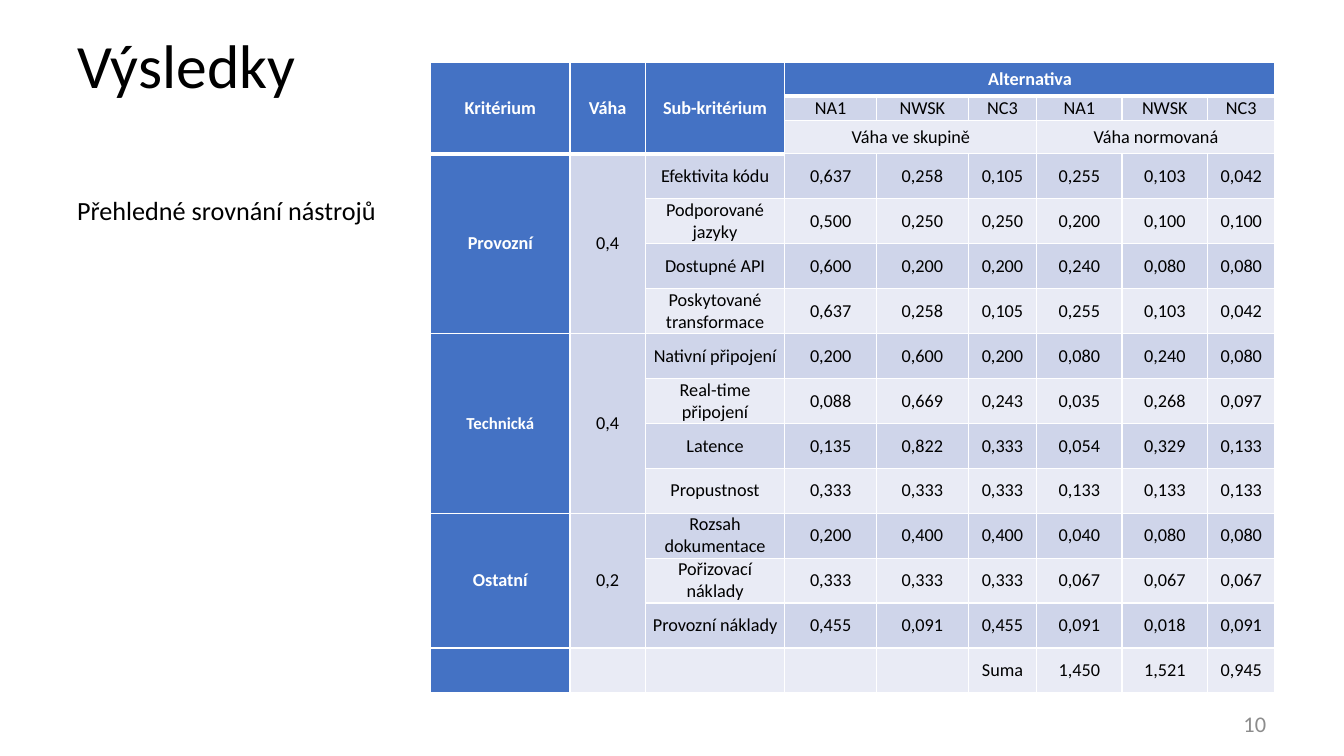
from lxml import etree
from pptx import Presentation
from pptx.dml.color import RGBColor
from pptx.enum.text import MSO_ANCHOR, PP_ALIGN
from pptx.oxml.ns import qn
from pptx.util import Pt

LEFT, CENTER, RIGHT = PP_ALIGN.LEFT, PP_ALIGN.CENTER, PP_ALIGN.RIGHT
TOP, MIDDLE = MSO_ANCHOR.TOP, MSO_ANCHOR.MIDDLE

WHITE, BLACK, GRAY = "FFFFFF", "000000", "8C8C8C"
BLUE, BAND_DARK, BAND_LIGHT = "4472C4", "CFD5EA", "E9EBF5"

COL_WIDTHS = [99.7, 53.7, 99.7, 65.5, 65.5, 49, 61, 61, 48.3]
HEADER_HEIGHTS = [23.7, 17.7, 23.7]
ROW_HEIGHT = 32.1
HEADERS = ["Kritérium", "Váha", "Sub-kritérium"]
TOOLS = ["NA1", "NWSK", "NC3"]
VALUE_COL = len(HEADERS)
CRITERIA = [
    ("Provozní", "0,4", 13, [
        ("Efektivita kódu", "0,637 0,258 0,105 0,255 0,103 0,042"),
        ("Podporované jazyky", "0,500 0,250 0,250 0,200 0,100 0,100"),
        ("Dostupné API", "0,600 0,200 0,200 0,240 0,080 0,080"),
        ("Poskytované transformace", "0,637 0,258 0,105 0,255 0,103 0,042"),
    ]),
    ("Technická", "0,4", 12, [
        ("Nativní připojení", "0,200 0,600 0,200 0,080 0,240 0,080"),
        ("Real-time připojení", "0,088 0,669 0,243 0,035 0,268 0,097"),
        ("Latence", "0,135 0,822 0,333 0,054 0,329 0,133"),
        ("Propustnost", "0,333 0,333 0,333 0,133 0,133 0,133"),
    ]),
    ("Ostatní", "0,2", 13, [
        ("Rozsah dokumentace", "0,200 0,400 0,400 0,040 0,080 0,080"),
        ("Pořizovací náklady", "0,333 0,333 0,333 0,067 0,067 0,067"),
        ("Provozní náklady", "0,455 0,091 0,455 0,091 0,018 0,091"),
    ]),
]
TOTALS = ["Suma", "1,450", "1,521", "0,945"]


def rgb(value):
    return RGBColor.from_string(value)


def under_header(row, col):
    """Tell whether the thick line below the blue header runs under this cell."""
    return row == (2 if col < VALUE_COL else 0)


class Slide:
    font = "Calibri"

    def __init__(self, prs):
        self.s = prs.slides.add_slide(prs.slide_layouts[6])

    def run(self, p, text, size, color, bold=False):
        r = p.add_run()
        r.text = text
        r.font.name, r.font.size, r.font.bold = self.font, Pt(size), bold
        r.font.color.rgb = rgb(color)

    def text(self, x, y, w, h, text, size, color=BLACK, align=LEFT, anchor=TOP):
        tf = self.s.shapes.add_textbox(Pt(x), Pt(y), Pt(w), Pt(h)).text_frame
        tf.word_wrap = True
        tf.vertical_anchor = anchor
        p = tf.paragraphs[0]
        p.alignment, p.line_spacing = align, 0.9
        self.run(p, text, size, color)

    def border(self, cell, side, width):
        tc_pr = cell._tc.get_or_add_tcPr()
        ln = etree.SubElement(tc_pr, qn("a:ln" + side), w=str(Pt(width)))
        fill = etree.SubElement(ln, qn("a:solidFill"))
        etree.SubElement(fill, qn("a:srgbClr"), val=WHITE)

    def table(self, x, y, widths, heights):
        """Add an empty table with white borders, a blue first column and banded rows."""
        table = self.s.shapes.add_table(
            len(heights), len(widths), Pt(x), Pt(y), Pt(sum(widths)), Pt(sum(heights))).table
        table.first_row = table.horz_banding = False
        for col, width in zip(table.columns, widths):
            col.width = Pt(width)
        for row, height in zip(table.rows, heights):
            row.height = Pt(height)
        for i in range(len(heights)):
            for j in range(len(widths)):
                cell = table.cell(i, j)
                self.border(cell, "L", 1)
                self.border(cell, "R", 1)
                self.border(cell, "T", 3 if under_header(i - 1, j) else 1)
                self.border(cell, "B", 3 if under_header(i, j) else 1)
                band = BAND_DARK if i % 2 else BAND_LIGHT
                self.paint(cell, BLUE if j == 0 else band)
                cell.margin_top = cell.margin_bottom = 0
        return table

    def paint(self, cell, color):
        cell.fill.solid()
        cell.fill.fore_color.rgb = rgb(color)

    def cell(self, table, row, col, text, rows=1, cols=1, head=False, size=13):
        cell = table.cell(row, col)
        if rows * cols > 1:
            cell.merge(table.cell(row + rows - 1, col + cols - 1))
            cell.margin_left = cell.margin_right = Pt(7.9)
            cell.margin_top = cell.margin_bottom = Pt(3.9)
        else:
            cell.margin_left = cell.margin_right = Pt(5.4)
        if head:
            self.paint(cell, BLUE)
        cell.vertical_anchor = MIDDLE
        p = cell.text_frame.paragraphs[0]
        p.alignment = CENTER
        self.run(p, text, size, WHITE if head else BLACK, head)


def fill_header(slide, table):
    for col, text in enumerate(HEADERS):
        slide.cell(table, 0, col, text, rows=3, head=True)
    slide.cell(table, 0, VALUE_COL, "Alternativa", cols=6, head=True)
    for i, tool in enumerate(TOOLS * 2):
        slide.cell(table, 1, VALUE_COL + i, tool)
    for i, text in enumerate(["Váha ve skupině", "Váha normovaná"]):
        slide.cell(table, 2, VALUE_COL + 3 * i, text, cols=3)


def fill_criteria(slide, table):
    row = len(HEADER_HEIGHTS)
    for name, weight, size, subs in CRITERIA:
        slide.cell(table, row, 0, name, rows=len(subs), head=True, size=size)
        slide.cell(table, row, 1, weight, rows=len(subs))
        for sub, values in subs:
            for col, text in enumerate([sub] + values.split(), 2):
                slide.cell(table, row, col, text)
            row += 1
    for col, text in enumerate(TOTALS, 5):
        slide.cell(table, row, col, text)


def main():
    prs = Presentation()
    prs.slide_width, prs.slide_height = Pt(960), Pt(540)
    slide = Slide(prs)
    slide.text(48, 21.6, 463, 91.4, "Výsledky", 44)
    slide.text(48, 137.5, 286, 59.8, "Přehledné srovnání nástrojů", 18.7)
    slide.text(804, 504, 107.5, 28.8, "10", 16, GRAY, RIGHT, MIDDLE)
    row_count = sum(len(subs) for *_, subs in CRITERIA) + 1
    table = slide.table(307.5, 44.8, COL_WIDTHS, HEADER_HEIGHTS + [ROW_HEIGHT] * row_count)
    fill_header(slide, table)
    fill_criteria(slide, table)
    prs.save("out.pptx")


if __name__ == "__main__":
    main()
